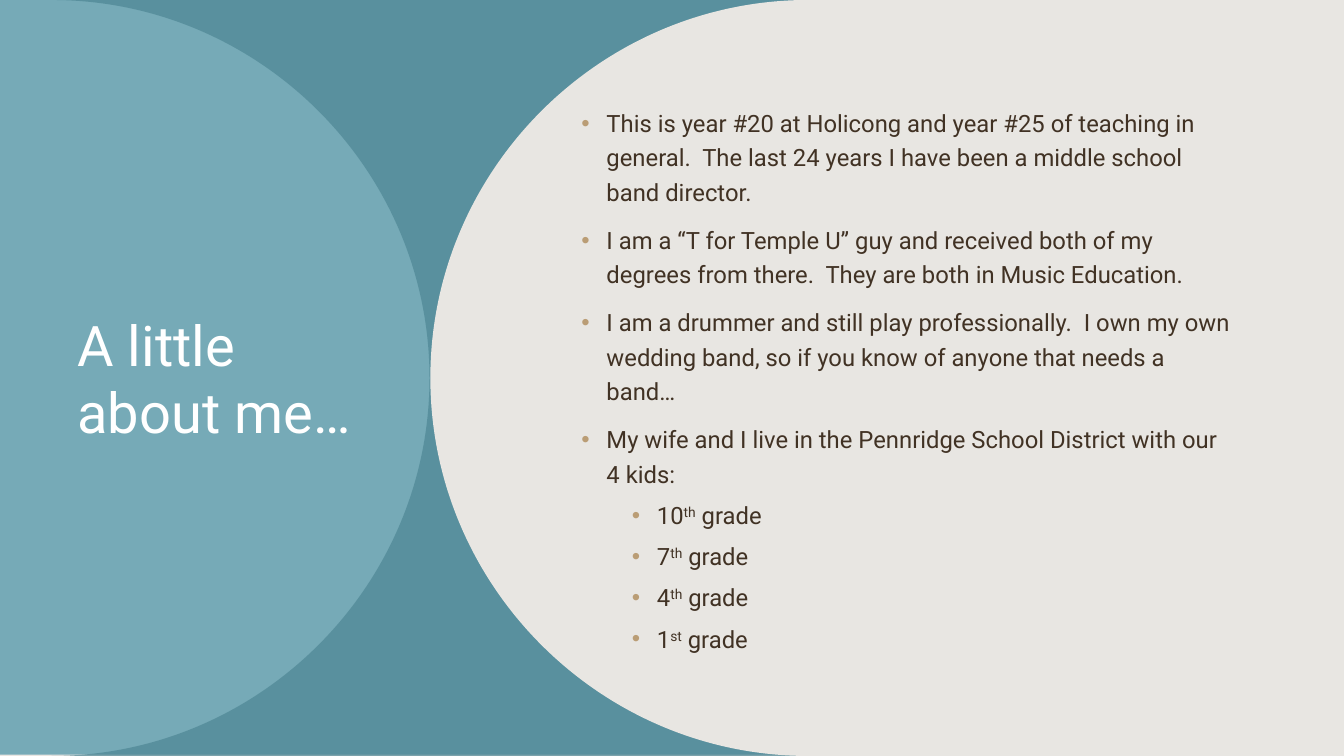
from dataclasses import dataclass

import pptx
import pptx.dml.color
import pptx.enum.shapes
import pptx.enum.text
import pptx.oxml
import pptx.oxml.ns
import pptx.shapes.base
import pptx.slide
import pptx.util
from pptx.util import Cm


@dataclass(frozen=True)
class Theme:
    font: str = "Roboto"
    paper: str = "E8E6E2"
    light_teal: str = "76AAB7"
    dark_teal: str = "4E8694"
    title: str = "FFFFFF"
    body: str = "413224"
    bullet: str = "BA9D75"
    title_size: float = 40
    body_size: float = 17


@dataclass(frozen=True)
class Panel:
    left: float
    width: float
    height: float
    color: str


@dataclass(frozen=True)
class CurvedPanel:
    """A panel whose left side is a half circle, bulging right (1) or left (-1)."""
    centre: float
    right: float
    bulge: int
    color: str
    opacity: int = 100


@dataclass(frozen=True)
class Item:
    text: str
    ordinal: str = ""
    ending: str = ""
    level: int = 0


THEME = Theme()
WIDTH, HEIGHT = 33.87, 19.05
CURVE_HANDLE = 0.55  # handle length of a quarter circle, in radii

PANELS = [
    Panel(0, WIDTH, HEIGHT, THEME.paper),
    Panel(-0.03, 21.87, 19.02, THEME.light_teal),
]
DARK_BAND = CurvedPanel(1.3, 21.72, 1, THEME.dark_teal, 70)
PAPER_CURVE = CurvedPanel(20.37, 27.41, -1, THEME.paper)

ITEMS = [
    Item("This is year #20 at Holicong and year #25 of teaching in general.  "
         "The last 24 years I have been a middle school band director."),
    Item("I am a “T for Temple U” guy and received both of my degrees from there.  "
         "They are both in Music Education."),
    Item("I am a drummer and still play professionally.  I own my own wedding band, "
         "so if you know of anyone that needs a band…"),
    Item("My wife and I live in the Pennridge School District with our 4 kids:"),
    Item("10", "th", " grade", 1),
    Item("7", "th", " grade", 1),
    Item("4", "th", " grade", 1),
    Item("1", "st", " grade", 1),
]


def rgb(color: str) -> pptx.dml.color.RGBColor:
    return pptx.dml.color.RGBColor.from_string(color)


def paint(shape: pptx.shapes.base.BaseShape, color: str, opacity: int = 100) -> None:
    shape.shadow.inherit = False
    shape.line.fill.background()
    shape.fill.solid()
    shape.fill.fore_color.rgb = rgb(color)
    if opacity < 100:
        fill_color = shape._element.spPr.find(".//" + pptx.oxml.ns.qn("a:srgbClr"))
        fill_color.append(pptx.oxml.parse_xml(
            f'<a:alpha {pptx.oxml.ns.nsdecls("a")} val="{opacity * 1000}"/>'))


def draw_panel(page: pptx.slide.Slide, panel: Panel) -> None:
    shape = page.shapes.add_shape(
        pptx.enum.shapes.MSO_SHAPE.RECTANGLE,
        Cm(panel.left), Cm(0), Cm(panel.width), Cm(panel.height))
    paint(shape, panel.color)


def bend(shape: pptx.shapes.base.BaseShape, curves: int) -> None:
    """Turn each three of the first line segments into one cubic curve."""
    segments = shape._element.findall(".//" + pptx.oxml.ns.qn("a:lnTo"))
    for start in range(0, 3 * curves, 3):
        curve = pptx.oxml.parse_xml(f'<a:cubicBezTo {pptx.oxml.ns.nsdecls("a")}/>')
        segments[start].addprevious(curve)
        for segment in segments[start:start + 3]:
            curve.append(segment[0])
            segment.getparent().remove(segment)


def draw_curved_panel(page: pptx.slide.Slide, panel: CurvedPanel) -> None:
    radius = HEIGHT / 2
    # Half circle in radii from its centre: two curves of two handles and an end
    half_circle = [(CURVE_HANDLE, -1), (1, -CURVE_HANDLE), (1, 0),
                   (1, CURVE_HANDLE), (CURVE_HANDLE, 1), (0, 1)]
    arc = [(Cm(panel.centre + panel.bulge * radius * across), Cm(radius + radius * down))
           for across, down in half_circle]
    corners = [(Cm(panel.right), Cm(HEIGHT)), (Cm(panel.right), Cm(0))]
    outline = page.shapes.build_freeform(Cm(panel.centre), Cm(0))
    outline.add_line_segments(arc + corners, close=True)
    shape = outline.convert_to_shape()
    bend(shape, 2)
    paint(shape, panel.color, panel.opacity)


def write(para, text: str, *, size: float, color: str, superscript: bool = False) -> None:
    span = para.add_run()
    span.text = text
    span.font.name = THEME.font
    span.font.size = pptx.util.Pt(size)
    span.font.color.rgb = rgb(color)
    if superscript:
        span._r.get_or_add_rPr().set("baseline", "30000")


def place(box, left: float, width: float) -> None:
    box.left, box.top, box.width, box.height = Cm(left), Cm(1.9), Cm(width), Cm(15.25)
    frame = box.text_frame
    frame.word_wrap = True
    frame.auto_size = pptx.enum.text.MSO_AUTO_SIZE.NONE
    frame.vertical_anchor = pptx.enum.text.MSO_ANCHOR.MIDDLE


def add_bullet(para, level: int) -> None:
    properties = para._p.get_or_add_pPr()
    properties.set("marL", str(Cm(0.63 + 1.27 * level)))
    properties.set("indent", str(Cm(-0.63)))
    names = pptx.oxml.ns.nsdecls("a")
    for xml in (f'<a:buClr {names}><a:srgbClr val="{THEME.bullet}"/></a:buClr>',
                f'<a:buFont {names} typeface="Arial"/>',
                f'<a:buChar {names} char="•"/>'):
        properties.append(pptx.oxml.parse_xml(xml))


def fill_title(box) -> None:
    place(box, 1.7, 8.2)
    para = box.text_frame.paragraphs[0]
    para.alignment = pptx.enum.text.PP_ALIGN.LEFT
    write(para, "A little about me…", size=THEME.title_size, color=THEME.title)


def fill_body(box) -> None:
    place(box, 14.4, 16.94)
    frame = box.text_frame
    for index, item in enumerate(ITEMS):
        para = frame.add_paragraph() if index else frame.paragraphs[0]
        para.level = item.level
        add_bullet(para, item.level)
        para.alignment = pptx.enum.text.PP_ALIGN.LEFT
        para.line_spacing = 1.2
        para.space_before = pptx.util.Pt((5 if item.level else 10) if index else 0)
        for text in filter(None, (item.text, item.ordinal, item.ending)):
            write(para, text, size=THEME.body_size, color=THEME.body,
                  superscript=text == item.ordinal)


def main() -> None:
    deck = pptx.Presentation()
    deck.slide_width, deck.slide_height = Cm(WIDTH), Cm(HEIGHT)
    page = deck.slides.add_slide(deck.slide_layouts[1])
    page.background.fill.solid()
    page.background.fill.fore_color.rgb = rgb(THEME.paper)
    title, body = page.placeholders

    # Backdrop
    for panel in PANELS:
        draw_panel(page, panel)
    draw_curved_panel(page, DARK_BAND)
    draw_curved_panel(page, PAPER_CURVE)

    # Text, brought in front of the backdrop
    fill_title(title)
    fill_body(body)
    for box in (title, body):
        page.shapes._spTree.append(box._element)

    deck.save("out.pptx")


if __name__ == "__main__":
    main()
